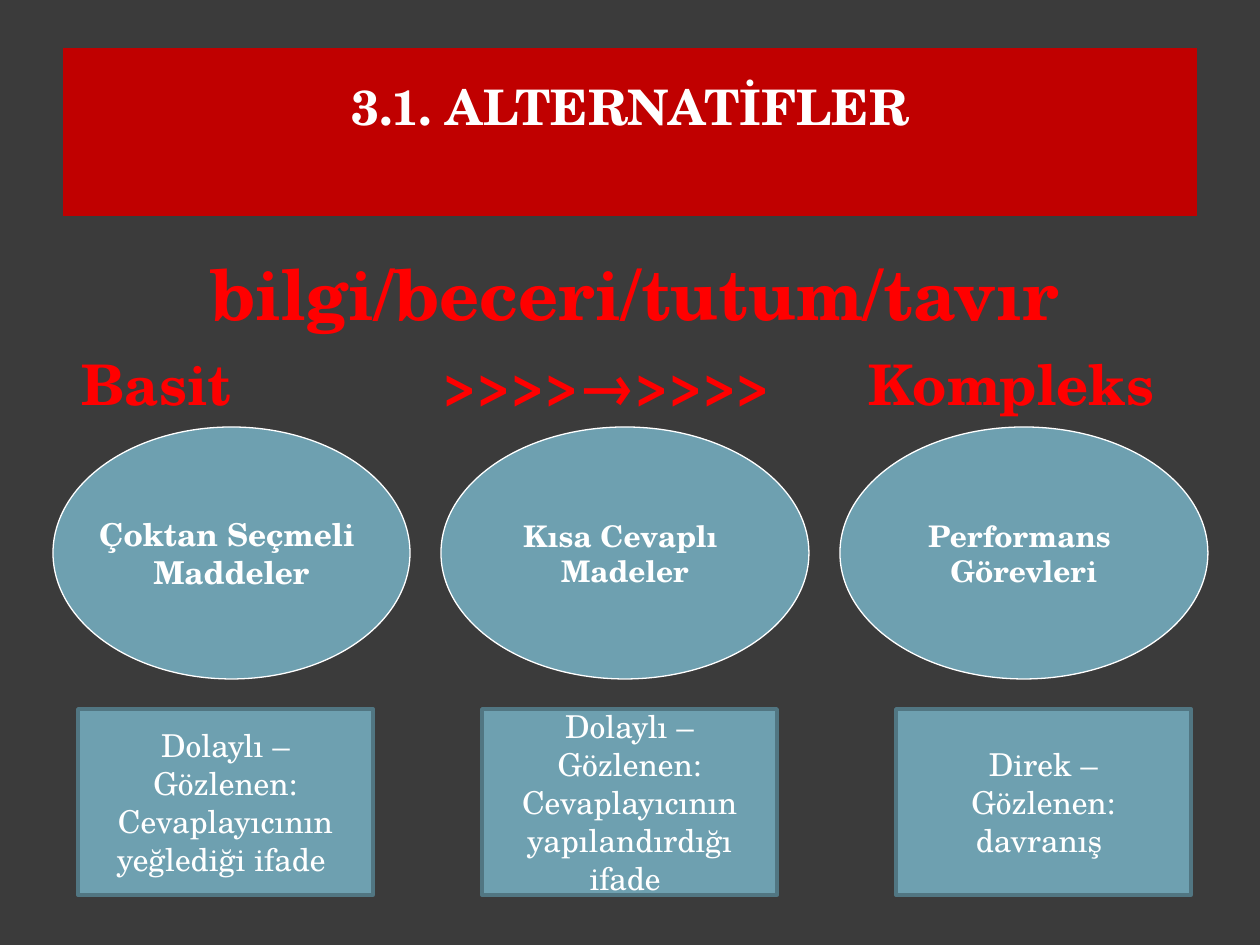
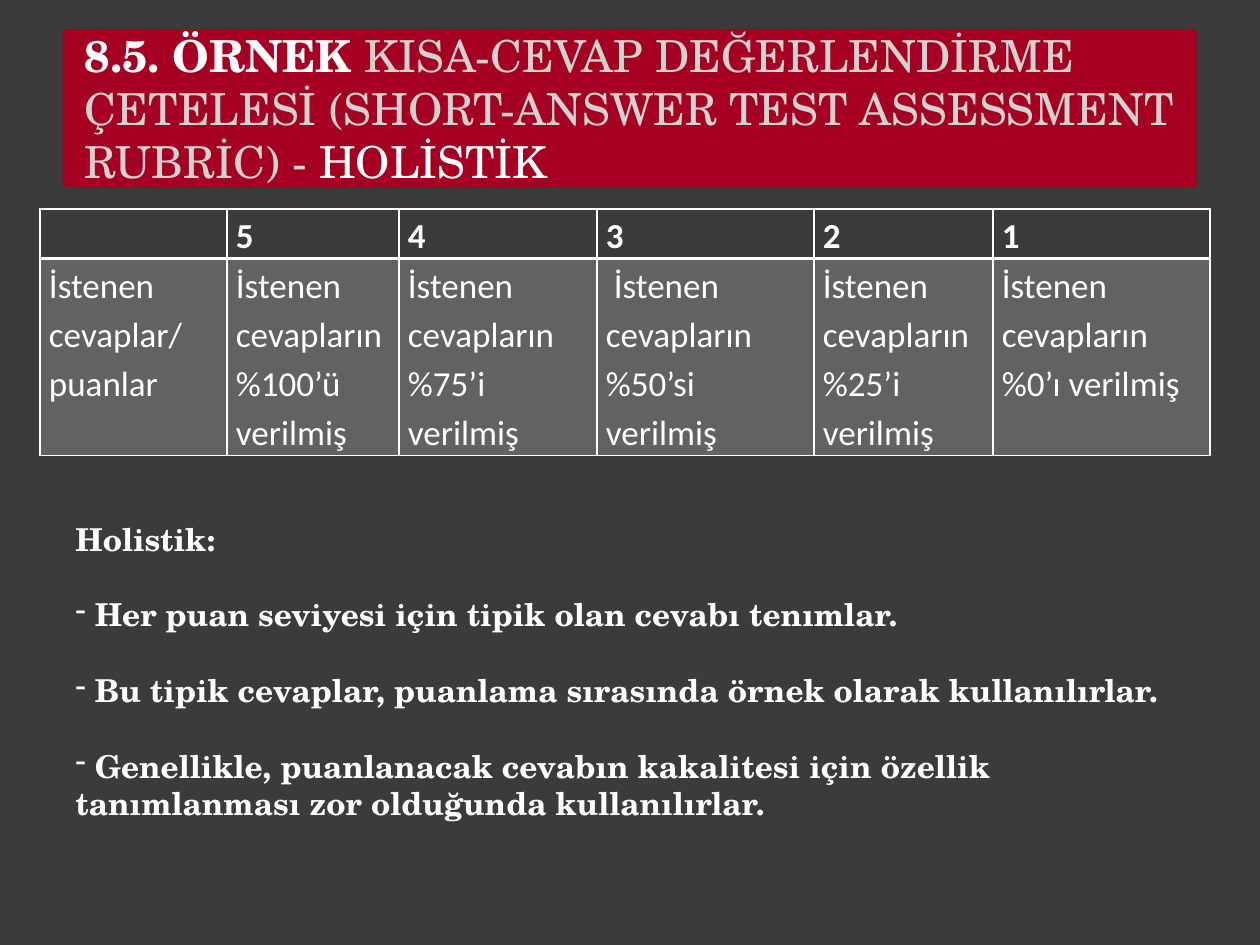
import lxml.etree
import pptx
import pptx.dml.color
import pptx.enum.shapes
import pptx.enum.text
import pptx.oxml.ns
import pptx.util

PX = 914400 / 126
SERIF, SANS = "TeX Gyre Schola", "Calibri"
DARK, WHITE, PALE = "3B3B3B", "FFFFFF", "D4D2D0"
RED, BRIGHT_RED, CRIMSON = "C00000", "FF0000", "A50021"
BLUE, BLUE_EDGE = "6EA0B0", "517682"
SHAPES = pptx.enum.shapes.MSO_SHAPE
LEFT, CENTER = pptx.enum.text.PP_ALIGN.LEFT, pptx.enum.text.PP_ALIGN.CENTER
MIDDLE, TOP = pptx.enum.text.MSO_ANCHOR.MIDDLE, pptx.enum.text.MSO_ANCHOR.TOP


def emu(px):
    return pptx.util.Emu(round(px * PX))


def color(code):
    return pptx.dml.color.RGBColor.from_string(code)


def assign(target, values):
    for name, value in values.items():
        setattr(target, name, value)


def add_xml(parent, tag, **attributes):
    return lxml.etree.SubElement(parent, pptx.oxml.ns.qn(tag), attributes)


def paint(fill, code):
    fill.solid()
    fill.fore_color.rgb = color(code)


class SlideBuilder:
    """Holds the deck style and the page being filled; lengths are in px."""

    def __init__(self):
        self.deck = pptx.Presentation()
        assign(self.deck, {"slide_width": emu(1260), "slide_height": emu(945)})
        paint(self.deck.slide_master.background.fill, DARK)
        self.page = None

    def new_page(self):
        self.page = self.deck.slides.add_slide(self.deck.slide_layouts[5])

    def fill_frame(self, frame, paragraphs, size, align=LEFT, ink=WHITE,
                   bold=False, font=SERIF, spacing=None):
        """Add paragraphs, each a string or a list of (text, ink, bold)."""
        for index, content in enumerate(paragraphs):
            para = frame.paragraphs[0] if index == 0 else frame.add_paragraph()
            assign(para, {"alignment": align, "line_spacing": spacing})
            spans = [(content, ink, bold)] if isinstance(content, str) else content
            for text, span_ink, span_bold in spans:
                span = para.add_run()
                span.text = text
                assign(span.font, {"name": font, "size": pptx.util.Pt(size),
                                   "bold": span_bold})
                span.font.color.rgb = color(span_ink)

    def title(self, spans, top, height, fill, size, align, margins):
        box = self.page.shapes.title
        assign(box, {"left": emu(63), "top": emu(top),
                     "width": emu(1134), "height": emu(height)})
        paint(box.fill, fill)
        frame = box.text_frame
        assign(frame, {"vertical_anchor": MIDDLE, "word_wrap": True,
                       "auto_size": pptx.enum.text.MSO_AUTO_SIZE.NONE})
        assign(frame, {f"margin_{side}": emu(px) for side, px in margins.items()})
        self.fill_frame(frame, [spans], size, align)

    def shape(self, kind, place, paragraphs, edge, edge_width, size,
              bold=False, wrap=True):
        box = self.page.shapes.add_shape(kind, *map(emu, place))
        box.shadow.inherit = False
        paint(box.fill, BLUE)
        paint(box.line.fill, edge)
        box.line.width = pptx.util.Pt(edge_width)
        assign(box.text_frame, {"vertical_anchor": MIDDLE, "word_wrap": wrap})
        self.fill_frame(box.text_frame, paragraphs, size, CENTER, bold=bold)

    def text(self, place, paragraphs, size, anchor=TOP, **style):
        frame = self.page.shapes.add_textbox(*map(emu, place)).text_frame
        assign(frame, {"word_wrap": True, "vertical_anchor": anchor})
        self.fill_frame(frame, paragraphs, size, bold=True, **style)
        return frame.paragraphs

    def tab_stops(self, para, stops):
        tabs = add_xml(para._p.get_or_add_pPr(), "a:tabLst")
        for stop in stops:
            add_xml(tabs, "a:tab", pos=str(emu(stop)), algn="l")

    def dash_bullet(self, para, gap):
        para.space_before = pptx.util.Pt(gap)
        properties = para._p.get_or_add_pPr()
        add_xml(properties, "a:buFontTx")
        add_xml(properties, "a:buChar", char="-")

    def borders(self, cell, widths):
        for side, width in widths.items():
            line = add_xml(cell._tc.get_or_add_tcPr(), f"a:ln{side}",
                           w=str(pptx.util.Pt(width)))
            add_xml(add_xml(line, "a:solidFill"), "a:srgbClr", val=WHITE)

    def table(self, left, top, columns, heights, rows):
        place = (left, top, sum(columns), sum(heights))
        grid = self.page.shapes.add_table(len(rows), len(columns),
                                          *map(emu, place)).table
        assign(grid, {"first_row": False, "horz_banding": False})
        for column, width in zip(grid.columns, columns):
            column.width = emu(width)
        for row_index, texts in enumerate(rows):
            grid.rows[row_index].height = emu(heights[row_index])
            header = row_index == 0
            for cell, text in zip(grid.rows[row_index].cells, texts):
                assign(cell, {"margin_left": emu(9), "margin_right": emu(9),
                              "margin_top": 0, "margin_bottom": 0})
                self.borders(cell, {"L": 1, "R": 1, "T": 1 if header else 2,
                                    "B": 2 if header else 1})
                if header:
                    cell.fill.background()
                else:
                    paint(cell.fill, WHITE)
                    shade = cell._tc.tcPr[-1][0]
                    add_xml(shade, "a:alpha", val="20000")
                if text:
                    self.fill_frame(cell.text_frame, [text], 20, bold=header,
                                    font=SANS, spacing=1.15)


def alternatives_page(builder):
    builder.new_page()
    builder.title([("3.1. ALTERNATİFLER", WHITE, True)], 48, 168, RED, 28, CENTER,
                  {"left": 12, "right": 12, "top": 6, "bottom": 58})

    ovals = [((53, 357), 18, ["Çoktan Seçmeli ", "Maddeler"]),
             ((441, 368), 17, ["Kısa Cevaplı ", "Madeler"]),
             ((840, 368), 17, ["Performans ", "Görevleri"])]
    for (left, width), size, lines in ovals:
        builder.shape(SHAPES.OVAL, (left, 427, width, 252), lines, WHITE, 0.75,
                      size, bold=True, wrap=False)

    cards = [(78, ["Dolaylı –", "Gözlenen:", "Cevaplayıcının yeğlediği ifade "]),
             (482, ["Dolaylı –", "Gözlenen:",
                    "Cevaplayıcının yapılandırdığı ifade "]),
             (896, ["Direk –", "Gözlenen: davranış "])]
    for left, lines in cards:
        builder.shape(SHAPES.RECTANGLE, (left, 709, 295, 186), lines, BLUE_EDGE,
                      2, 18)

    scale = builder.text((69, 343, 1131, 81), ["Basit\t>>>>→>>>>\tKompleks"], 32,
                         ink=BRIGHT_RED)
    builder.tab_stops(scale[0], (362, 787))
    builder.text((69, 244, 1131, 97), ["bilgi/beceri/tutum/tavır"], 40,
                 align=CENTER, ink=BRIGHT_RED)


def rubric_page(builder):
    builder.new_page()
    builder.title([("8.5. ÖRNEK ", WHITE, True),
                   ("KISA-CEVAP DEĞERLENDİRME ÇETELESİ (SHORT-ANSWER TEST "
                    "ASSESSMENT RUBRİC) - ", PALE, False),
                   ("HOLİSTİK", WHITE, False)], 29, 158, CRIMSON, 25.2, LEFT,
                  {"left": 22, "right": 12, "top": 0, "bottom": 0})

    shares = ["İstenen cevapların %100’ü verilmiş",
              "İstenen cevapların %75’i verilmiş",
              " İstenen cevapların %50’si verilmiş",
              "İstenen cevapların %25’i verilmiş",
              "İstenen cevapların %0’ı verilmiş"]
    builder.table(40, 209, (187, 172, 198, 217, 179, 217), (49, 197),
                  [["", *"54321"], ["İstenen cevaplar/ puanlar", *shares]])

    notes = builder.text(
        (63, 512, 1138, 318),
        ["Holistik:",
         " Her puan seviyesi için tipik olan cevabı tenımlar.",
         " Bu tipik cevaplar, puanlama sırasında örnek olarak kullanılırlar.",
         " Genellikle, puanlanacak cevabın kakalitesi için özellik "
         "tanımlanması zor olduğunda kullanılırlar."], 18, anchor=MIDDLE)
    for para in notes[1:]:
        builder.dash_bullet(para, 21.6)


def main():
    builder = SlideBuilder()
    alternatives_page(builder)
    rubric_page(builder)
    builder.deck.save("out.pptx")


if __name__ == "__main__":
    main()
